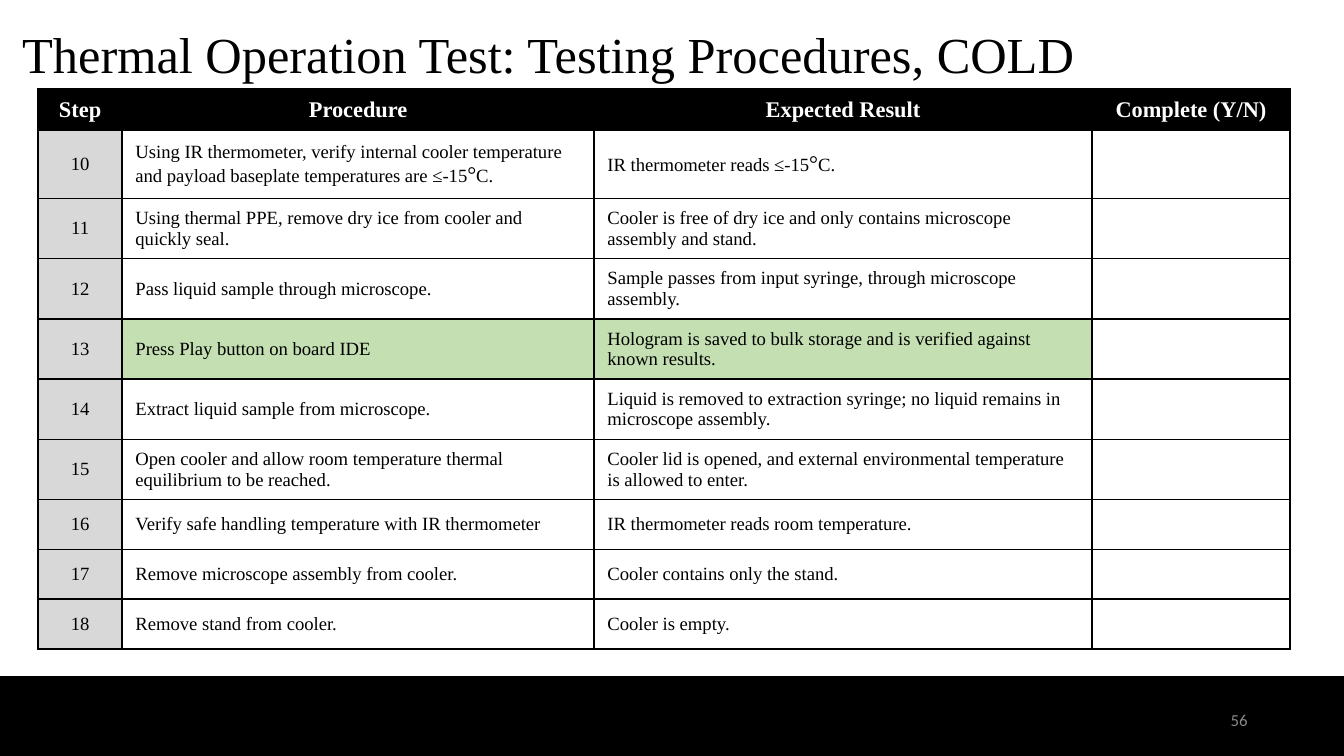
from lxml.etree import SubElement
from pptx import Presentation
from pptx.dml.color import RGBColor
from pptx.enum.shapes import MSO_SHAPE
from pptx.enum.text import MSO_ANCHOR, PP_ALIGN
from pptx.oxml.ns import qn
from pptx.util import Cm, Pt

SERIF = "Times New Roman"
BLACK, WHITE, GRAY, GREEN = "000000", "FFFFFF", "D8D8D8", "C4E0B2"
HEADS = ["Step", "Procedure", "Expected Result", "Complete (Y/N)"]
STEPS = [
    ("Using IR thermometer, verify internal cooler temperature and payload "
     "baseplate temperatures are ≤-15°C.",
     "IR thermometer reads ≤-15°C."),
    ("Using thermal PPE, remove dry ice from cooler and quickly seal.",
     "Cooler is free of dry ice and only contains microscope assembly and stand."),
    ("Pass liquid sample through microscope.",
     "Sample passes from input syringe, through microscope assembly."),
    ("Press Play button on board IDE",
     "Hologram is saved to bulk storage and is verified against known results."),
    ("Extract liquid sample from microscope.",
     "Liquid is removed to extraction syringe; no liquid remains in microscope assembly."),
    ("Open cooler and allow room temperature thermal equilibrium to be reached.",
     "Cooler lid is opened, and external environmental temperature is allowed to enter."),
    ("Verify safe handling temperature with IR thermometer",
     "IR thermometer reads room temperature."),
    ("Remove microscope assembly from cooler.", "Cooler contains only the stand."),
    ("Remove stand from cooler.", "Cooler is empty."),
]
FIRST, MARKED = 10, 13
COLS = [1.59, 8.92, 9.41, 3.74]
ROWS = [0.78, 1.29] + [1.14] * 5 + [0.94] * 3


def paint(form, color):
    """Set a solid color on a fill."""
    form.solid()
    form.fore_color.rgb = RGBColor.from_string(color)


def style(para, size, color, face=SERIF, bold=False, align=PP_ALIGN.LEFT):
    """Format a whole paragraph."""
    para.alignment = align
    font = para.font
    font.name, font.size, font.bold = face, Pt(size), bold
    font.color.rgb = RGBColor.from_string(color)


def inset(frame, side):
    """Give a text frame equal margins and wrapping."""
    frame.margin_left = frame.margin_right = Cm(side)
    frame.margin_top = frame.margin_bottom = Cm(side)
    frame.word_wrap = True


def place(shape, left, top, width, height):
    """Move and size a shape."""
    shape.left, shape.top = Cm(left), Cm(top)
    shape.width, shape.height = Cm(width), Cm(height)


def add_title(slide, text):
    """Fill the title placeholder."""
    title = slide.shapes.title
    place(title, 0.17, 0.32, 23.67, 1.6)
    frame = title.text_frame
    inset(frame, 0.25)
    frame.vertical_anchor = MSO_ANCHOR.TOP
    frame.text = text
    para = frame.paragraphs[0]
    para.line_spacing = 0.9
    style(para, 27, BLACK)


def add_band(slide):
    """Draw the black footer band."""
    band = slide.shapes.add_shape(
        MSO_SHAPE.RECTANGLE, Cm(0), Cm(12.79), Cm(25.4), Cm(1.5))
    band.shadow.inherit = False
    paint(band.fill, BLACK)
    paint(band.line.fill, BLACK)
    band.line.width = Pt(1)


def add_number(slide, text):
    """Write the slide number on the band."""
    box = slide.shapes.add_textbox(Cm(22.3), Cm(13.06), Cm(1.53), Cm(1.09))
    frame = box.text_frame
    inset(frame, 0.25)
    frame.vertical_anchor = MSO_ANCHOR.MIDDLE
    frame.text = text
    style(frame.paragraphs[0], 9, "888888", "Calibri", align=PP_ALIGN.RIGHT)


def add_edges(cell):
    """Outline a cell in black."""
    props = cell._tc.get_or_add_tcPr()
    for i, tag in enumerate(("a:lnL", "a:lnR", "a:lnT", "a:lnB")):
        line = props.makeelement(qn(tag), {"w": str(Pt(1))})
        fill = SubElement(line, qn("a:solidFill"))
        SubElement(fill, qn("a:srgbClr"), val=BLACK)
        props.insert(i, line)


def fill_cell(cell, text, fill, head, center):
    """Write and format one table cell."""
    tight = head or not text
    cell.margin_left = cell.margin_right = Cm(0.08 if tight else 0.25)
    cell.margin_top = cell.margin_bottom = Cm(0.02 if tight else 0.13)
    cell.vertical_anchor = MSO_ANCHOR.MIDDLE
    para = cell.text_frame.paragraphs[0]
    style(para, 12 if head else 10, WHITE if head else BLACK, bold=head,
          align=PP_ALIGN.CENTER if center else PP_ALIGN.LEFT)
    for part in filter(None, text.partition("°")):
        run = para.add_run()
        run.text = part
        if part == "°":
            run.font.size = Pt(12)
    if fill:
        paint(cell.fill, fill)
    else:
        cell.fill.background()
    add_edges(cell)


def add_steps(slide):
    """Build the table of test steps."""
    table = slide.shapes.add_table(
        len(ROWS), len(COLS), Cm(0.72), Cm(1.68),
        Cm(sum(COLS)), Cm(sum(ROWS))).table
    for col, width in zip(table.columns, COLS):
        col.width = Cm(width)
    for row, height in zip(table.rows, ROWS):
        row.height = Cm(height)
    for i, text in enumerate(HEADS):
        fill_cell(table.cell(0, i), text, BLACK, True, True)
    for i, (task, result) in enumerate(STEPS):
        step = FIRST + i
        mark = GREEN if step == MARKED else None
        texts = [str(step), task, result, ""]
        fills = [GRAY, mark, mark, None]
        for j, (text, fill) in enumerate(zip(texts, fills)):
            fill_cell(table.cell(i + 1, j), text, fill, False, j == 0)


def main():
    """Build and save the slide."""
    deck = Presentation()
    deck.slide_width, deck.slide_height = Cm(25.4), Cm(14.29)
    slide = deck.slides.add_slide(deck.slide_layouts[5])
    add_band(slide)
    add_title(slide, "Thermal Operation Test: Testing Procedures, COLD")
    add_number(slide, "56")
    add_steps(slide)
    deck.save("out.pptx")


if __name__ == "__main__":
    main()
